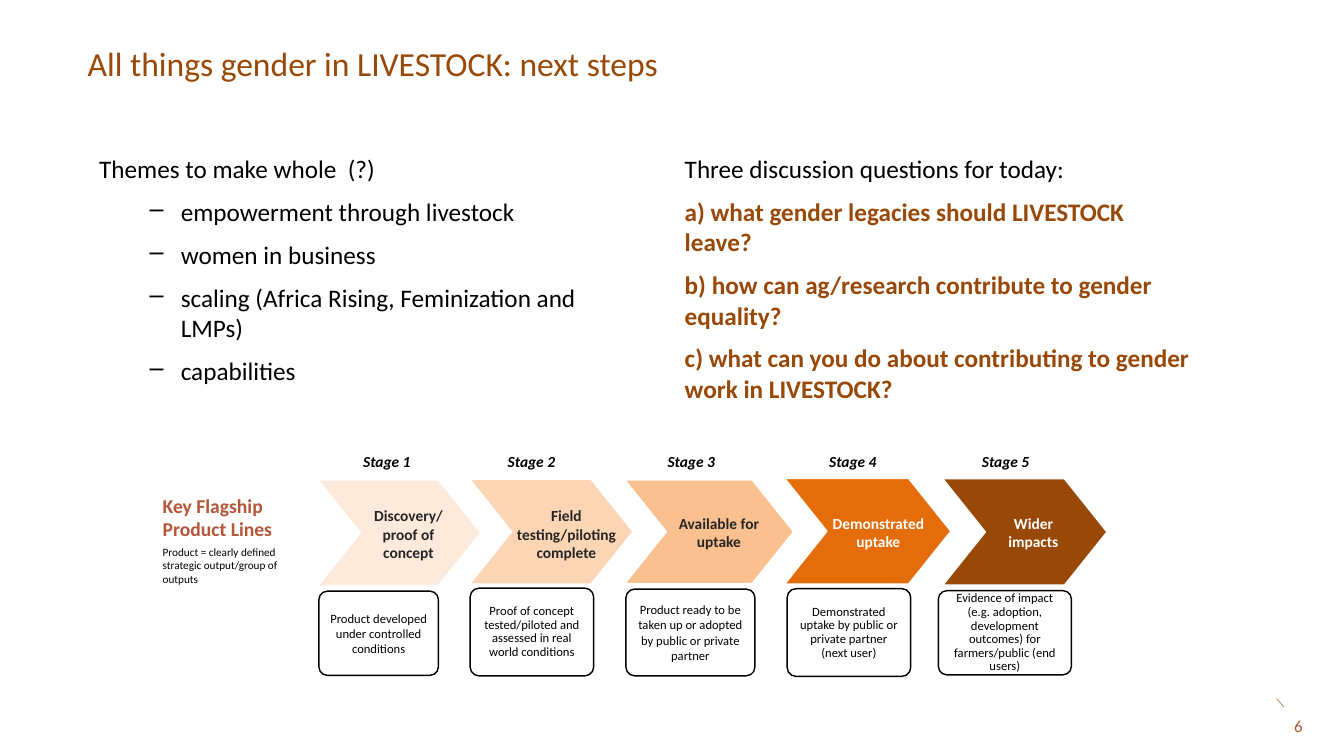
from dataclasses import dataclass

from lxml import etree
from pptx import Presentation
from pptx import util as u
from pptx.dml.color import RGBColor
from pptx.enum import shapes, text
from pptx.oxml.ns import qn

WIDTH, HEIGHT = u.Inches(26.67), u.Inches(15)
FONT = "Calibri"
BLACK = RGBColor(0x00, 0x00, 0x00)
WHITE = RGBColor(0xFF, 0xFF, 0xFF)
CHARCOAL = RGBColor(0x26, 0x26, 0x26)
BROWN = RGBColor(0x98, 0x48, 0x07)
RUST = RGBColor(0xB5, 0x56, 0x38)
LEFT, CENTER, RIGHT = text.PP_ALIGN.LEFT, text.PP_ALIGN.CENTER, text.PP_ALIGN.RIGHT
TOP, MIDDLE = text.MSO_ANCHOR.TOP, text.MSO_ANCHOR.MIDDLE


@dataclass(frozen=True)
class Area:
    """A rectangle in percent of the slide's width and height."""
    x: float
    y: float
    w: float
    h: float

    def emu(self) -> tuple[int, int, int, int]:
        return (round(WIDTH * self.x / 100), round(HEIGHT * self.y / 100),
                round(WIDTH * self.w / 100), round(HEIGHT * self.h / 100))


@dataclass(frozen=True)
class Style:
    size: float
    color: RGBColor = BLACK
    bold: bool = False
    italic: bool = False
    align: text.PP_ALIGN = LEFT


@dataclass(frozen=True)
class Line:
    words: str
    style: Style
    bullet: bool = False
    before: float = 0
    after: float = 0
    spacing: float = 1.0


@dataclass(frozen=True)
class Stage:
    label_x: float
    arrow: Area
    fill: RGBColor
    name: str
    name_area: Area
    name_color: RGBColor
    detail: str
    detail_area: Area
    spacing: float = 0.9


STAGES = [
    Stage(26.21, Area(23.66, 63.47, 12.11, 14), RGBColor(0xFD, 0xEA, 0xDA),
          "Discovery/ proof of concept", Area(26.96, 66.67, 6.86, 8.07), CHARCOAL,
          "Product developed under controlled conditions",
          Area(23.73, 78.2, 8.89, 11.13), 1.0),
    Stage(36.97, Area(34.95, 63.4, 12.15, 13.87), RGBColor(0xFC, 0xD5, 0xB5),
          "Field testing/piloting complete", Area(37.87, 66.67, 8.55, 8.07), CHARCOAL,
          "Proof of concept tested/piloted and assessed in real world conditions",
          Area(34.98, 77.8, 9.19, 11.6)),
    Stage(48.86, Area(46.49, 63.47, 12.56, 13.73), RGBColor(0xFA, 0xC0, 0x90),
          "Available for uptake", Area(50.06, 67.67, 6.86, 5.6), CHARCOAL,
          "Product ready to be taken up or adopted by public or private partner",
          Area(46.57, 77.93, 9.6, 11.47), 1.0),
    Stage(60.89, Area(58.38, 63.27, 12.37, 14), RGBColor(0xE4, 0x6C, 0x0A),
          "Demonstrated uptake", Area(61.3, 67.67, 8.1, 5.6), WHITE,
          "Demonstrated uptake by public or private partner (next user)",
          Area(58.57, 77.87, 9.19, 11.6)),
    Stage(72.25, Area(70.15, 63.33, 12.22, 14.07), BROWN,
          "Wider impacts", Area(74.32, 67.67, 5.14, 5.6), WHITE,
          "Evidence of impact (e.g. adoption, development outcomes) "
          "for farmers/public (end users)",
          Area(69.82, 78.13, 9.9, 11.13)),
]
THEMES = ["empowerment through livestock", "women in business",
          "scaling (Africa Rising, Feminization and LMPs)", "capabilities"]
QUESTIONS = ["a) what gender legacies should LIVESTOCK leave?",
             "b) how can ag/research contribute to gender equality?",
             "c) what can you do about contributing to gender work in LIVESTOCK?"]


def write(box, lines: list[Line], anchor=TOP, inset: float | None = None) -> None:
    frame = box.text_frame
    frame.word_wrap = True
    frame.auto_size = text.MSO_AUTO_SIZE.NONE
    frame.vertical_anchor = anchor
    if inset is not None:
        frame.margin_left = frame.margin_right = u.Inches(inset)
        frame.margin_top = frame.margin_bottom = u.Inches(inset)
    for index, line in enumerate(lines):
        para = frame.add_paragraph() if index else frame.paragraphs[0]
        para.text = line.words
        para.alignment = line.style.align
        para.line_spacing = line.spacing
        para.space_before = u.Pt(line.before if index else 0)
        para.space_after = u.Pt(line.after)
        if line.bullet:
            para.level = 1
            props = para._p.get_or_add_pPr()
            props.set("marL", str(u.Inches(1.62)))
            props.set("indent", str(u.Inches(-0.62)))
            etree.SubElement(props, qn("a:buChar"), char="–")
        font = para.font
        font.name, font.size = FONT, u.Pt(line.style.size)
        font.bold, font.italic = line.style.bold, line.style.italic
        font.color.rgb = line.style.color


def add_text(page, area: Area, lines: list[Line], anchor=TOP) -> None:
    write(page.shapes.add_textbox(*area.emu()), lines, anchor)


def add_shape(page, kind, area: Area, adjust: float, fill: RGBColor, outline: RGBColor):
    shape = page.shapes.add_shape(kind, *area.emu())
    shape.adjustments[0] = adjust
    shape.shadow.inherit = False
    shape.fill.solid()
    shape.fill.fore_color.rgb = fill
    shape.line.color.rgb = outline
    shape.line.width = u.Pt(2)
    return shape


def add_stage(page, number: int, stage: Stage) -> None:
    add_shape(page, shapes.MSO_SHAPE.CHEVRON, stage.arrow, 0.4, stage.fill, WHITE)
    card = add_shape(page, shapes.MSO_SHAPE.ROUNDED_RECTANGLE, stage.detail_area,
                     0.1, WHITE, BLACK)
    write(card, [Line(stage.detail, Style(18, align=CENTER), spacing=stage.spacing)],
          MIDDLE, 0.14)
    add_text(page, Area(stage.label_x, 59.53, 5.14, 3.13),
             [Line(f"Stage {number}", Style(22, BLACK, True, True, CENTER))])
    add_text(page, stage.name_area,
             [Line(stage.name, Style(22, stage.name_color, True, align=CENTER))])


def add_column(page, x: float, lines: list[Line]) -> None:
    add_text(page, Area(x, 20, 38.36, 35), lines)


def main() -> None:
    deck = Presentation()
    deck.slide_width, deck.slide_height = WIDTH, HEIGHT
    page = deck.slides.add_slide(deck.slide_layouts[5])

    # Title
    title = page.shapes.title
    title.left, title.top, title.width, title.height = Area(6.15, 5.33, 72.93, 6.07).emu()
    write(title, [Line("All things gender in LIVESTOCK: next steps", Style(48, BROWN))])

    # Themes and questions
    plain, strong = Style(36), Style(36, BROWN, True)
    add_column(page, 7.01, [Line("Themes to make whole  (?)", plain, after=6)]
               + [Line(theme, plain, True, 12, 6) for theme in THEMES])
    add_column(page, 50.58, [Line("Three discussion questions for today:", plain, after=6)]
               + [Line(question, strong, False, 12, 6) for question in QUESTIONS])

    # Product line stages
    add_text(page, Area(11.74, 65, 10.54, 6.93),
             [Line("Key Flagship Product Lines", Style(28, RUST, True))])
    add_text(page, Area(11.74, 71.73, 10.54, 6.07),
             [Line("Product = clearly defined strategic output/group of outputs",
                   Style(16))], MIDDLE)
    for number, stage in enumerate(STAGES, 1):
        add_stage(page, number, stage)

    # Page number and its tick
    x, y, w, h = Area(94.98, 92.4, 0.56, 1.13).emu()
    tick = page.shapes.add_connector(shapes.MSO_CONNECTOR.STRAIGHT, x, y, x + w, y + h)
    tick.line.color.rgb = RUST
    tick.line.width = u.Pt(0.75)
    etree.SubElement(tick._element.spPr, qn("a:effectLst"))
    add_text(page, Area(94.68, 94.4, 2.62, 3.33), [Line("6", Style(24, RUST, align=RIGHT))])

    deck.save("out.pptx")


if __name__ == "__main__":
    main()
